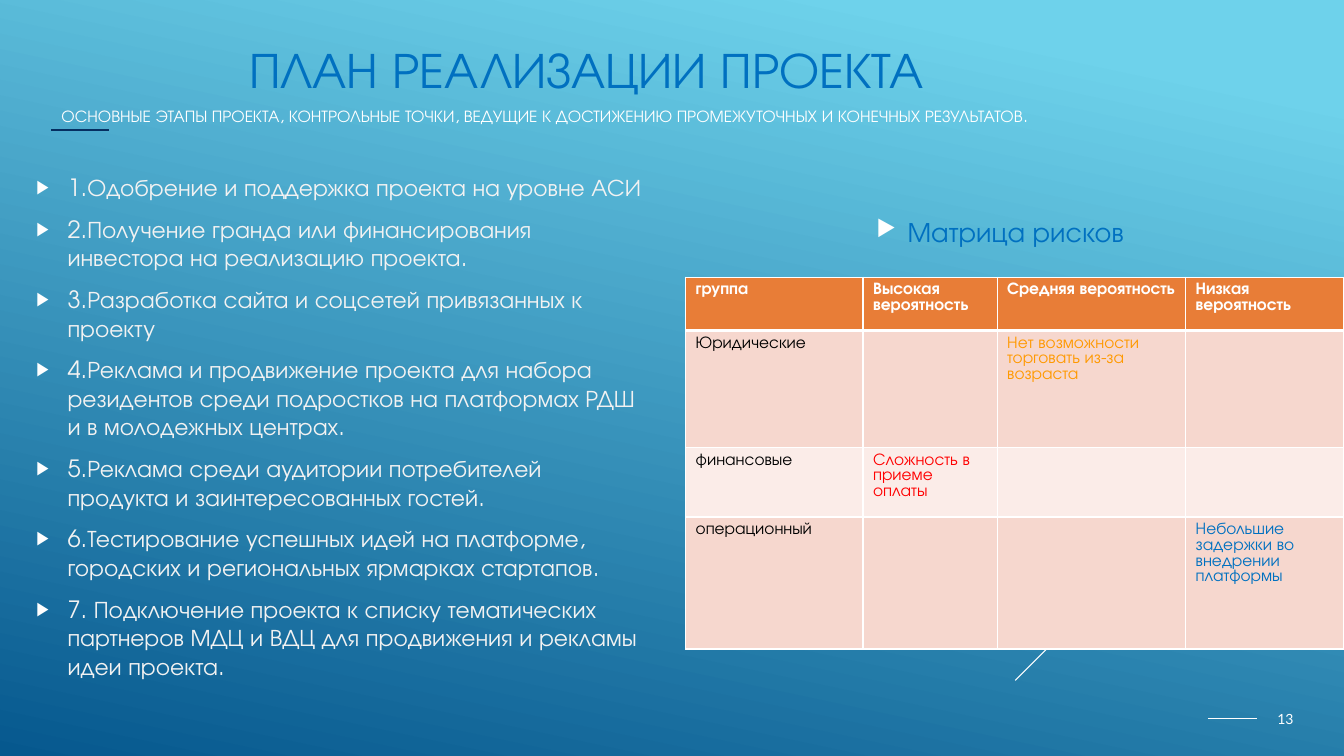
import pptx
import pptx.util
import pptx.dml.color
import pptx.enum.shapes
import pptx.enum.text
import pptx.oxml
import pptx.oxml.ns

Inches, Pt = pptx.util.Inches, pptx.util.Pt
RGB = pptx.dml.color.RGBColor
Align, Anchor = pptx.enum.text.PP_ALIGN, pptx.enum.text.MSO_ANCHOR
qn = pptx.oxml.ns.qn
NS = pptx.oxml.ns.nsdecls("a")

# Colours and fonts
WHITE, BLACK = RGB(255, 255, 255), RGB(0, 0, 0)
SKY, DEEP = RGB(0x6E, 0xD2, 0xEB), RGB(0x06, 0x58, 0x8E)
NAVY, BLUE = RGB(0x05, 0x2F, 0x61), RGB(0x00, 0x70, 0xC0)
PALE = RGB(0xF2, 0xF2, 0xF2)
RED, AMBER = RGB(0xFF, 0, 0), RGB(0xFF, 0x99, 0)
HEAD, DARK, LIGHT = RGB(0xE8, 0x7D, 0x37), RGB(0xF6, 0xD7, 0xCE), RGB(0xFB, 0xEC, 0xE8)
FONT, SMALL = "TeX Gyre Adventor", "Lato"

# Content
HEADING = "ПЛАН РЕАЛИЗАЦИИ ПРОЕКТА"
TITLE = ("ОСНОВНЫЕ ЭТАПЫ ПРОЕКТА, КОНТРОЛЬНЫЕ ТОЧКИ, ВЕДУЩИЕ К ДОСТИЖЕНИЮ "
         "ПРОМЕЖУТОЧНЫХ И КОНЕЧНЫХ РЕЗУЛЬТАТОВ.")
STEPS = [
    "1.Одобрение и поддержка проекта на уровне АСИ",
    "2.Получение гранда или финансирования инвестора на реализацию проекта.",
    "3.Разработка сайта и соцсетей привязанных к проекту",
    "4.Реклама и продвижение проекта для набора резидентов среди подростков "
    "на платформах РДШ и в молодежных центрах.",
    "5.Реклама среди аудитории потребителей продукта и заинтересованных гостей.",
    "6.Тестирование успешных идей на платформе, городских и региональных "
    "ярмарках стартапов.",
    "7. Подключение проекта к списку тематических партнеров МДЦ и ВДЦ для "
    "продвижения и рекламы идеи проекта.",
]
MATRIX = "Матрица рисков"
RISKS = [
    ["группа", "Высокая вероятность", "Средняя вероятность", "Низкая вероятность"],
    ["Юридические", "", "Нет возможности торговать из-за возраста", ""],
    ["финансовые", "Сложность в приеме оплаты", "", ""],
    ["операционный", "", "", "Небольшие задержки во внедрении платформы"],
]
INKS = [BLACK, RED, AMBER, BLUE]
COLS = [1.76, 1.33, 1.87, 1.57]
ROWS = [0.53, 1.16, 0.69, 1.31]
LINES = [  # x1, y1, x2, y2, colour, width
    (13.33, 3.49, 10.07, 6.75, WHITE, 0.75),
    (0.51, 1.29, 1.08, 1.29, NAVY, 1.5),
    (11.98, 7.13, 12.47, 7.13, WHITE, 1),
]


def place(shape, *box):
    shape.left, shape.top, shape.width, shape.height = map(Inches, box)
    frame = shape.text_frame
    frame.word_wrap = True
    frame.auto_size = pptx.enum.text.MSO_AUTO_SIZE.NONE
    frame.vertical_anchor = Anchor.MIDDLE
    return frame


def inset(frame):
    frame.margin_left = frame.margin_right = 0
    frame.margin_top = frame.margin_bottom = 0


def style(para, size, ink, bold=False, face=FONT):
    for run in para.runs:
        font = run.font
        font.name, font.size, font.bold = face, Pt(size), bold
        font.color.rgb = ink


def bullet(para, mark=True):
    props = para._p.get_or_add_pPr()
    indent = Inches(0.31) if mark else 0
    props.set("marL", str(indent))
    props.set("indent", str(-indent))
    if mark:
        parts = ['<a:buClr %s><a:srgbClr val="FFFFFF"/></a:buClr>',
                 '<a:buSzPct %s val="80000"/>', '<a:buChar %s char="▶"/>']
    else:
        parts = ["<a:buNone %s/>"]
    for part in parts:
        props.append(pptx.oxml.parse_xml(part % NS))


def border(cell, base):
    props = cell._tc.get_or_add_tcPr()
    for side, width in zip("LRTB", (1, 1, 1, base)):
        props.append(pptx.oxml.parse_xml(
            f'<a:ln{side} {NS} w="{Pt(width)}"><a:solidFill>'
            f'<a:srgbClr val="FFFFFF"/></a:solidFill></a:ln{side}>'))


deck = pptx.Presentation()
deck.slide_width, deck.slide_height = Inches(13.33), Inches(7.5)
slide = deck.slides.add_slide(deck.slide_layouts[3])
shapes = slide.shapes

# Background
fill = slide.background.fill
fill.gradient()
fill.gradient_angle = 258
for stop, spot, tint in zip(fill.gradient_stops, (0.1, 1), (SKY, DEEP)):
    stop.position, stop.color.rgb = spot, tint

# Lines
for x1, y1, x2, y2, ink, width in LINES:
    line = shapes.add_connector(pptx.enum.shapes.MSO_CONNECTOR.STRAIGHT,
                                *map(Inches, (x1, y1, x2, y2)))
    line.line.color.rgb, line.line.width = ink, Pt(width)
    line._element.spPr.append(pptx.oxml.parse_xml(f"<a:effectLst {NS}/>"))

# Title and heading
frame = place(shapes.title, 0.51, 0.93, 11.77, 0.44)
frame.text = TITLE
frame.paragraphs[0].alignment = Align.LEFT
style(frame.paragraphs[0], 12, WHITE)

frame = place(slide.placeholders[2], 2.47, 0.13, 7.45, 0.8)
inset(frame)
frame.text = HEADING
para = frame.paragraphs[0]
bullet(para, False)
para.line_spacing, para.space_before = 1.5, Pt(0)
style(para, 36, BLUE)

# Project steps
frame = place(slide.placeholders[1], 0.26, 1.37, 6.25, 5.72)
frame.text = "\n".join(STEPS)
for i, para in enumerate(frame.paragraphs):
    bullet(para)
    para.space_before, para.space_after = Pt(3.4 if i else 0), Pt(6)
    style(para, 17, PALE)

# Risk matrix
frame = place(shapes.add_textbox(0, 0, 0, 0), 6.9, 2.05, 6.04, 0.49)
frame.text = MATRIX
para = frame.paragraphs[0]
bullet(para)
para.alignment = Align.CENTER
style(para, 20, BLUE)

grid = shapes.add_table(len(ROWS), len(COLS), Inches(6.8), Inches(2.75),
                        Inches(sum(COLS)), Inches(sum(ROWS))).table
for col, width in zip(grid.columns, COLS):
    col.width = Inches(width)
for r, (row, tall) in enumerate(zip(RISKS, ROWS)):
    grid.rows[r].height = Inches(tall)
    for c, text in enumerate(row):
        cell = grid.cell(r, c)
        border(cell, 1 if r else 3)
        cell.fill.solid()
        cell.fill.fore_color.rgb = (DARK if r % 2 else LIGHT) if r else HEAD
        cell.text = text
        para = cell.text_frame.paragraphs[0]
        para.line_spacing = Pt(11.25)
        style(para, 12, INKS[c] if r else WHITE, r == 0)

# Slide number
frame = place(shapes.add_textbox(0, 0, 0, 0), 12.65, 7.05, 0.18, 0.17)
inset(frame)
frame.word_wrap = False
frame.text = "13"
frame.paragraphs[0].alignment = Align.RIGHT
style(frame.paragraphs[0], 10, WHITE, face=SMALL)

deck.save("out.pptx")
